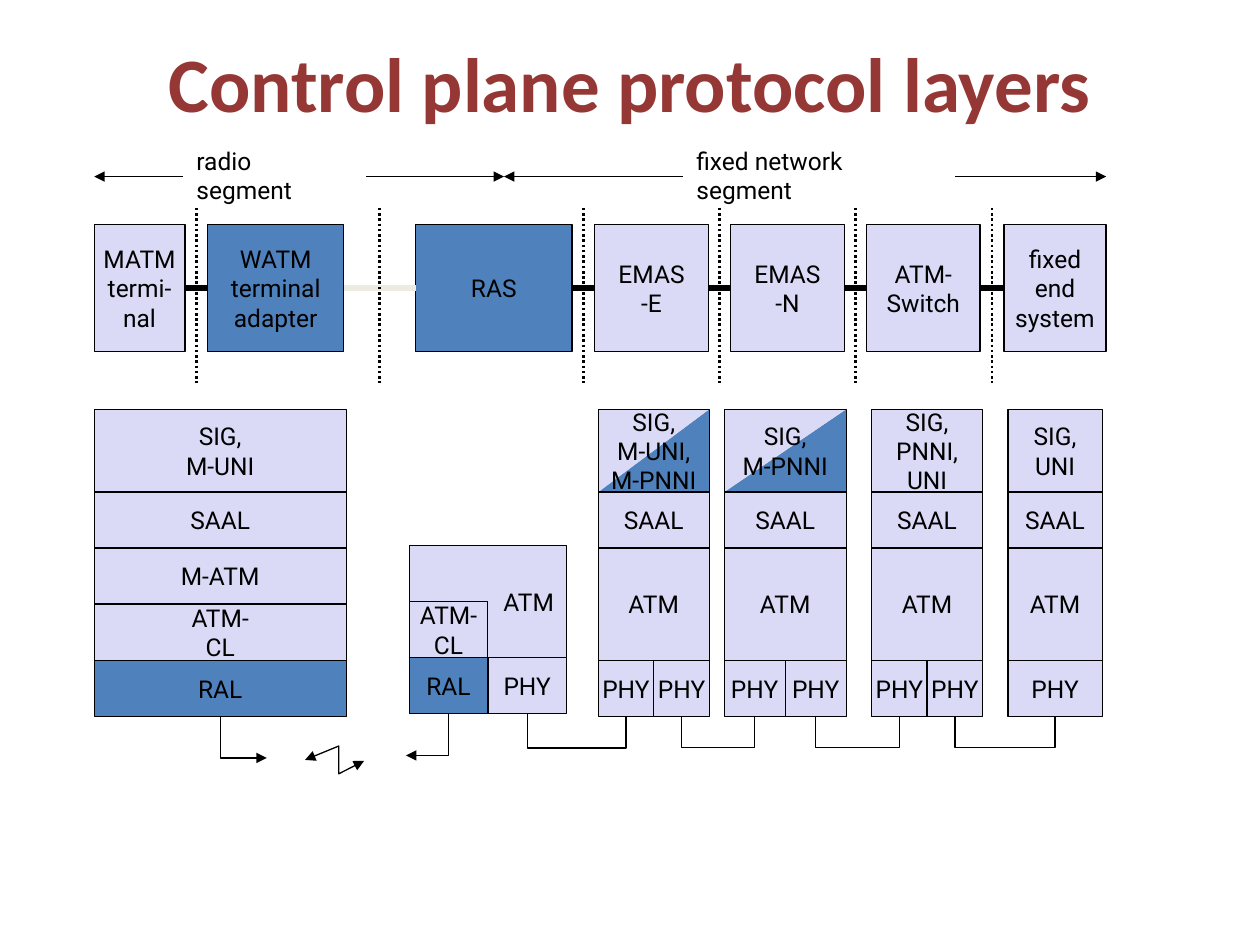
from dataclasses import dataclass
from itertools import pairwise

from lxml.etree import SubElement
from pptx import Presentation
from pptx.dml.color import RGBColor
from pptx.enum.dml import MSO_LINE
from pptx.enum.shapes import MSO_CONNECTOR, MSO_SHAPE
from pptx.enum.text import MSO_ANCHOR, PP_ALIGN
from pptx.oxml.ns import qn
from pptx.util import Cm, Pt


@dataclass(frozen=True)
class Theme:
    title: str = "953735"
    ink: str = "000000"
    paper: str = "FFFFFF"
    light: str = "DADAF6"
    blue: str = "4F81BD"
    radio: str = "EEECE1"
    title_font: str = "Calibri"
    font: str = "Roboto"
    title_size: float = 44
    size: float = 14
    thin: float = 0.75
    dotted: float = 1.5
    thick: float = 3


T = Theme()
SIG_H, ROW_H = 1.67, 1.13


def rgb(color):
    return RGBColor.from_string(color)


def write(sp, text, size=T.size, font=T.font, color=T.ink, bold=False,
          align=PP_ALIGN.CENTER, anchor=MSO_ANCHOR.MIDDLE, wrap=False):
    tf = sp.text_frame
    tf.word_wrap, tf.vertical_anchor = wrap, anchor
    for i, line in enumerate(text.split("\n")):
        p = tf.add_paragraph() if i else tf.paragraphs[0]
        p.alignment = align
        r = p.add_run()
        r.text = line
        r.font.size, r.font.name, r.font.bold = Pt(size), font, bold
        r.font.color.rgb = rgb(color)


def paint(sp, fill=None, line=None):
    sp.shadow.inherit = False
    if fill:
        sp.fill.solid()
        sp.fill.fore_color.rgb = rgb(fill)
    else:
        sp.fill.background()
    if line:
        sp.line.color.rgb = rgb(line)
        sp.line.width = Pt(T.thin)
    else:
        sp.line.fill.background()


def box(s, x, y, w, h, text, fill=T.light, line=T.ink, **fmt):
    sp = s.shapes.add_shape(MSO_SHAPE.RECTANGLE, Cm(x), Cm(y), Cm(w), Cm(h))
    paint(sp, fill, line)
    write(sp, text, **fmt)
    return sp


def polyline(s, points, close=False, fill=None, line=None):
    pts = [(Cm(x), Cm(y)) for x, y in points]
    builder = s.shapes.build_freeform(*pts[0])
    builder.add_line_segments(pts[1:], close=close)
    sp = builder.convert_to_shape()
    paint(sp, fill, line)
    return sp


def arrowheads(sp, *ends):
    for end in ends:
        SubElement(sp.line._get_or_add_ln(), qn(f"a:{end}"), type="triangle")


def connector(s, x1, y1, x2, y2, kind=MSO_CONNECTOR.STRAIGHT,
              color=T.ink, width=T.thin, dash=None, ends=()):
    c = s.shapes.add_connector(kind, Cm(x1), Cm(y1), Cm(x2), Cm(y2))
    c.line.color.rgb = rgb(color)
    c.line.width = Pt(width)
    if dash:
        c.line.dash_style = dash
    arrowheads(c, *ends)
    SubElement(c._element.spPr, qn("a:effectLst"))
    return c


def elbow(s, x1, y1, x2, y2, depth=None, ends=()):
    """Leave (x1, y1) downwards; with a depth, come back up into (x2, y2)."""
    w, h = max(abs(y2 - y1), 0.01), abs(x2 - x1)
    left, top = (x1 + x2 - w) / 2, (y1 + y2 - h) / 2
    c = connector(s, left, top, left + w, top + h, MSO_CONNECTOR.ELBOW, ends=ends)
    xfrm = c._element.spPr.find(qn("a:xfrm"))
    if x2 > x1:
        xfrm.set("rot", "16200000")
        xfrm.set("flipH", "1")
    else:
        xfrm.set("rot", "5400000")
    geom = c._element.spPr.find(qn("a:prstGeom"))
    if depth is None:
        geom.set("prst", "bentConnector2")
    else:
        guides = geom.find(qn("a:avLst"))
        SubElement(guides, qn("a:gd"), name="adj1",
                   fmla=f"val {round(depth / w * 100000)}")


def segments(s, x, y, w, split):
    """Double arrows naming the radio and the fixed part."""
    both = ("headEnd", "tailEnd")
    line_y = y + 0.74
    connector(s, x, line_y, x + split, line_y, ends=both)
    connector(s, x + split, line_y, x + w, line_y, ends=both)
    for dx, label_w, text in ((1.81, 3.66, "radio segment"),
                              (11.89, 5.46, "fixed network segment")):
        sp = box(s, x + dx, y, label_w, 0.87, text, T.paper, T.paper,
                 align=PP_ALIGN.LEFT, anchor=MSO_ANCHOR.TOP, wrap=True)
        sp.text_frame.margin_right = Cm(0.4)


def network(s, x, y, h):
    """Row of nodes, linked and parted by dotted interface lines."""
    nodes = [(0, 1.83, "MATM\ntermi-\nnal", T.light),
             (2.29, 2.74, "WATM\nterminal\nadapter", T.blue),
             (6.48, 3.15, "RAS", T.blue),
             (10.09, 2.29, "EMAS\n-E", T.light),
             (12.83, 2.29, "EMAS\n-N", T.light),
             (15.57, 2.29, "ATM-\nSwitch", T.light),
             (18.34, 2.06, "fixed\nend\nsystem", T.light)]
    shapes = [box(s, x + dx, y, w, h, text, fill) for dx, w, text, fill in nodes]
    for i, ((dx, w, *_), (next_dx, *_)) in enumerate(pairwise(nodes)):
        link = connector(s, x + dx + w, y + h / 2, x + next_dx, y + h / 2,
                         color=T.radio if i == 1 else T.ink, width=T.thick)
        link.begin_connect(shapes[i], 3)
        link.end_connect(shapes[i + 1], 1)
        mid = x + (dx + w + next_dx) / 2
        connector(s, mid, y - 0.33, mid, y + h + 0.63, width=T.dotted,
                  dash=MSO_LINE.ROUND_DOT)


def stack(s, x, y, w, sig, rows, ports, split=False):
    """Signalling layer, rows of (units, text), then ports of (text, fill)."""
    if split:
        low, high = (x, y + SIG_H), (x + w, y)
        for corner, fill in (((x + w, y + SIG_H), T.blue), ((x, y), T.light)):
            polyline(s, [low, high, corner], close=True, fill=fill)
    box(s, x, y, w, SIG_H, sig, None if split else T.light)
    y += SIG_H
    for units, text in rows:
        box(s, x, y, w, units * ROW_H, text)
        y += units * ROW_H
    port_w = w / len(ports)
    for i, (text, fill) in enumerate(ports):
        box(s, x + i * port_w, y, port_w, ROW_H, text, fill)
    return [x + (i + 0.5) * port_w for i in range(len(ports))], y + ROW_H


def ras_stack(s, x, y, w):
    """ATM wrapped round the convergence layer, over radio and wired ports."""
    half = w / 2
    box(s, x, y, w, 2 * ROW_H, "ATM", align=PP_ALIGN.RIGHT)
    box(s, x, y + ROW_H, half, ROW_H, "ATM-\nCL")
    box(s, x, y + 2 * ROW_H, half, ROW_H, "RAL", T.blue)
    box(s, x + half, y + 2 * ROW_H, half, ROW_H, "PHY")
    return [x + half / 2, x + 1.5 * half], y + 3 * ROW_H


def protocols(s, x, y):
    """Protocol stacks and the physical links below them."""
    phy = ("PHY", T.light)
    wired = [(1, "SAAL"), (2, "ATM")]
    (terminal,), bottom = stack(
        s, x, y, 5.08, "SIG,\nM-UNI",
        [(1, "SAAL"), (1, "M-ATM"), (1, "ATM-\nCL")], [("RAL", T.blue)])
    (radio, cable), ras_bottom = ras_stack(s, x + 6.35, y + 2.75, 3.17)

    # Wired stacks: offset, width, signalling, ports, split colour
    ports = [(cable, ras_bottom)]
    for dx, w, sig, count, split in (
            (10.16, 2.24, "SIG,\nM-UNI,\nM-PNNI", 2, True),
            (12.7, 2.46, "SIG,\nM-PNNI", 2, True),
            (15.67, 2.24, "SIG,\nPNNI,\nUNI", 2, False),
            (18.42, 1.9, "SIG,\nUNI", 1, False)):
        centres, _ = stack(s, x + dx, y, w, sig, wired, [phy] * count, split)
        ports += [(cx, bottom) for cx in centres]
    for (x1, y1), (x2, y2) in zip(ports[::2], ports[1::2]):
        elbow(s, x1, y1, x2, y2, depth=0.64 + y2 - y1)

    # Radio link
    elbow(s, terminal, bottom, terminal + 0.94, bottom + 0.84, ends=["tailEnd"])
    elbow(s, radio, ras_bottom, radio - 0.86, ras_bottom + 0.84, ends=["tailEnd"])
    flash = [(4.25, 0.88), (4.93, 0.6), (4.93, 1.16), (5.44, 0.9)]
    arrowheads(polyline(s, [(x + dx, bottom + dy) for dx, dy in flash], line=T.ink),
               "headEnd", "tailEnd")


def main():
    prs = Presentation()
    prs.slide_width, prs.slide_height = Cm(25.4), Cm(19.05)
    s = prs.slides.add_slide(prs.slide_layouts[6])
    title = s.shapes.add_textbox(Cm(1.27), Cm(0.76), Cm(22.86), Cm(1.78))
    write(title, "Control plane protocol layers", size=T.title_size,
          font=T.title_font, color=T.title, bold=True, wrap=True)
    segments(s, 1.9, 2.82, 20.4, split=8.26)
    network(s, 1.9, 4.52, 2.57)
    protocols(s, 1.9, 8.25)
    prs.save("out.pptx")


if __name__ == "__main__":
    main()
